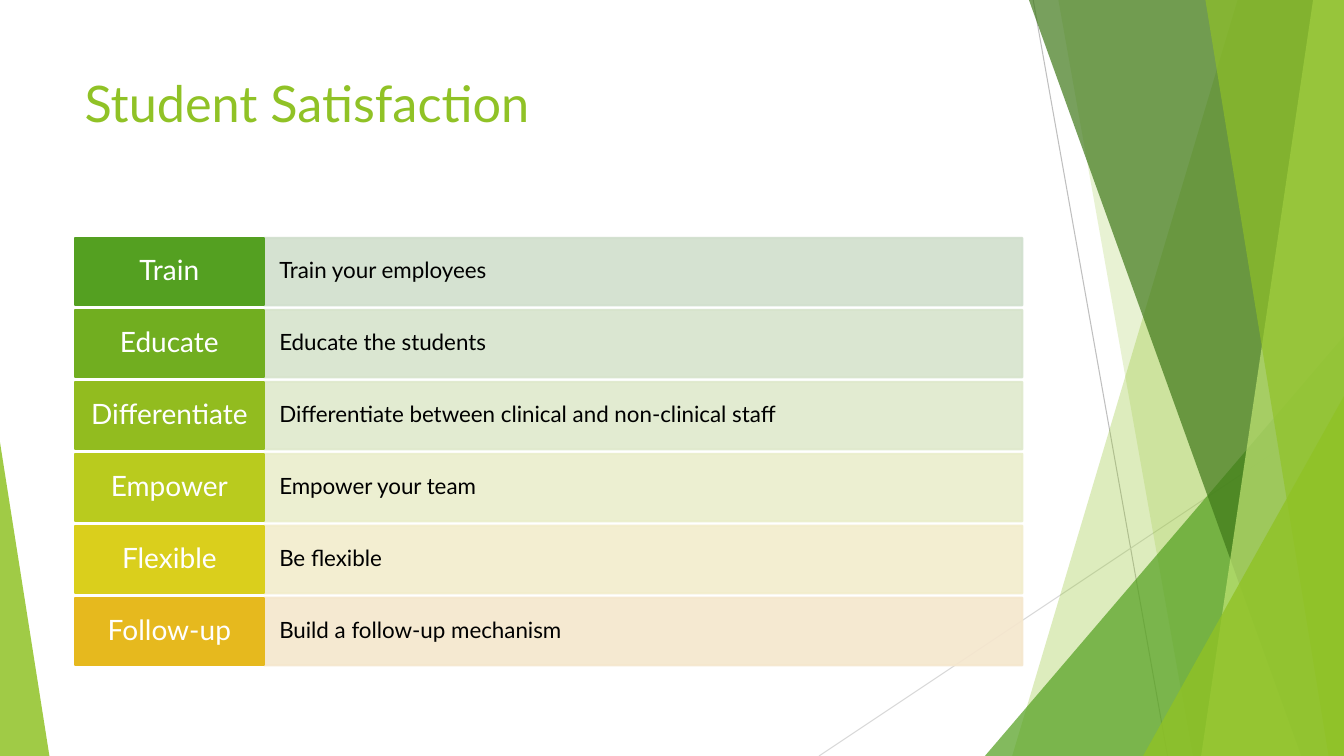
from pptx import Presentation
from pptx.dml.color import RGBColor
from pptx.enum.shapes import MSO_CONNECTOR as Connector, MSO_SHAPE as Shape
from pptx.enum.text import MSO_ANCHOR as Anchor, PP_ALIGN as Align
from pptx.oxml.ns import qn
from pptx.util import Pt
from lxml.etree import SubElement

WIDTH, HEIGHT = 960, 540
FONT = "Lato"
COLORS = {
    "lime": "90C226", "green": "54A021", "forest": "3F7819", "pale lime": "C0E474",
    "gray": "BFBFBF", "light gray": "D9D9D9", "white": "FFFFFF", "black": "000000",
    "train": "54A021", "train tint": "D1DFCD",
    "educate": "71AE20", "educate tint": "D7E4CC",
    "differentiate": "92BC1F", "differentiate tint": "DFE9CC",
    "empower": "B9CB1E", "empower tint": "EAEECC",
    "flexible": "DACF1C", "flexible tint": "F2EDCC",
    "follow-up": "E6B91E", "follow-up tint": "F5E7CD",
}
ROWS = [
    ("Train", "Train your employees"),
    ("Educate", "Educate the students"),
    ("Differentiate", "Differentiate between clinical and non-clinical staff"),
    ("Empower", "Empower your team"),
    ("Flexible", "Be flexible"),
    ("Follow-up", "Build a follow-up mechanism"),
]
ROWS_TOP, ROW_PITCH, ROW_HEIGHT = 170, 51.4, 48.2
LABEL_LEFT, LABEL_WIDTH, DETAIL_WIDTH = 53.3, 135.4, 541.6


def rgb(name):
    return RGBColor.from_string(COLORS[name])


def paint(shape, color, opacity=100, line_width=0):
    """Give fill and outline one colour and opacity, in percent."""
    shape.shadow.inherit = False
    shape.fill.solid()
    shape.fill.fore_color.rgb = rgb(color)
    if line_width:
        shape.line.color.rgb = rgb(color)
        shape.line.width = Pt(line_width)
    else:
        shape.line.fill.background()
    if opacity < 100:
        for tone in shape._element.spPr.iter(qn("a:srgbClr")):
            SubElement(tone, qn("a:alpha"), val=str(opacity * 1000))


def add_line(page, start, end, color):
    line = page.shapes.add_connector(Connector.STRAIGHT, *map(Pt, start + end))
    line.line.color.rgb = rgb(color)
    line.line.width = Pt(0.75)
    SubElement(line._element.spPr, qn("a:effectLst"))


def add_band(page, top_x, bottom_x, color, opacity):
    """Fill everything right of a slanted edge that runs the full slide height."""
    outline = page.shapes.build_freeform(Pt(top_x), 0)
    corners = [(WIDTH, 0), (WIDTH, HEIGHT), (bottom_x, HEIGHT)]
    outline.add_line_segments([(Pt(x), Pt(y)) for x, y in corners], close=True)
    paint(outline.convert_to_shape(), color, opacity)


def add_triangle(page, left, top, width, apex, color, opacity):
    """Stand a triangle on the bottom edge; apex is 0 (left) to 1 (right)."""
    triangle = page.shapes.add_shape(
        Shape.ISOSCELES_TRIANGLE, Pt(left), Pt(top), Pt(width), Pt(HEIGHT - top))
    triangle.adjustments[0] = apex
    paint(triangle, color, opacity)


def write(box, text, size, color, align=Align.LEFT, anchor=Anchor.MIDDLE,
          inset=(7.2, 3.6), spacing=1.0):
    frame = box.text_frame
    frame.word_wrap = True
    frame.vertical_anchor = anchor
    frame.margin_left = frame.margin_right = Pt(inset[0])
    frame.margin_top = frame.margin_bottom = Pt(inset[1])
    para = frame.paragraphs[0]
    para.alignment = align
    para.line_spacing = spacing
    span = para.add_run()
    span.text = text
    span.font.name = FONT
    span.font.size = Pt(size)
    span.font.color.rgb = rgb(color)


def add_cell(page, left, top, width, text, fill, opacity=100, **text_format):
    cell = page.shapes.add_shape(
        Shape.RECTANGLE, Pt(left), Pt(top), Pt(width), Pt(ROW_HEIGHT))
    paint(cell, fill, opacity, line_width=1.5)
    write(cell, text, spacing=0.9, **text_format)


def add_row(page, top, label, detail):
    tone = label.lower()
    add_cell(page, LABEL_LEFT + LABEL_WIDTH, top, DETAIL_WIDTH, detail, f"{tone} tint",
             opacity=90, size=16, color="black", inset=(10.8, 12))
    add_cell(page, LABEL_LEFT, top, LABEL_WIDTH, label, tone,
             size=20, color="white", align=Align.CENTER, inset=(7.2, 5))


def add_backdrop(page):
    add_line(page, (738, 0), (834, HEIGHT), "gray")
    add_line(page, (WIDTH, 290), (585, HEIGHT), "light gray")
    add_band(page, 884, 723, "lime", 30)
    add_band(page, 756, 852, "lime", 20)
    add_triangle(page, 703.5, 240, 256.5, 1, "green", 72)
    add_band(page, 735, 929.5, "forest", 70)
    add_band(page, 938, 858, "pale lime", 70)
    add_band(page, 861, 949, "lime", 65)
    add_triangle(page, 816.5, 283, 143.5, 1, "lime", 80)
    add_triangle(page, 0, 316, 35.3, 0, "lime", 85)


def main():
    deck = Presentation()
    deck.slide_width, deck.slide_height = Pt(WIDTH), Pt(HEIGHT)
    page = deck.slides.add_slide(deck.slide_layouts[6])
    add_backdrop(page)
    title = page.shapes.add_textbox(Pt(53.3), Pt(48.2), Pt(677), Pt(104))
    write(title, "Student Satisfaction", size=36, color="lime", anchor=Anchor.TOP)
    for index, (label, detail) in enumerate(ROWS):
        add_row(page, ROWS_TOP + index * ROW_PITCH, label, detail)
    deck.save("out.pptx")


if __name__ == "__main__":
    main()
